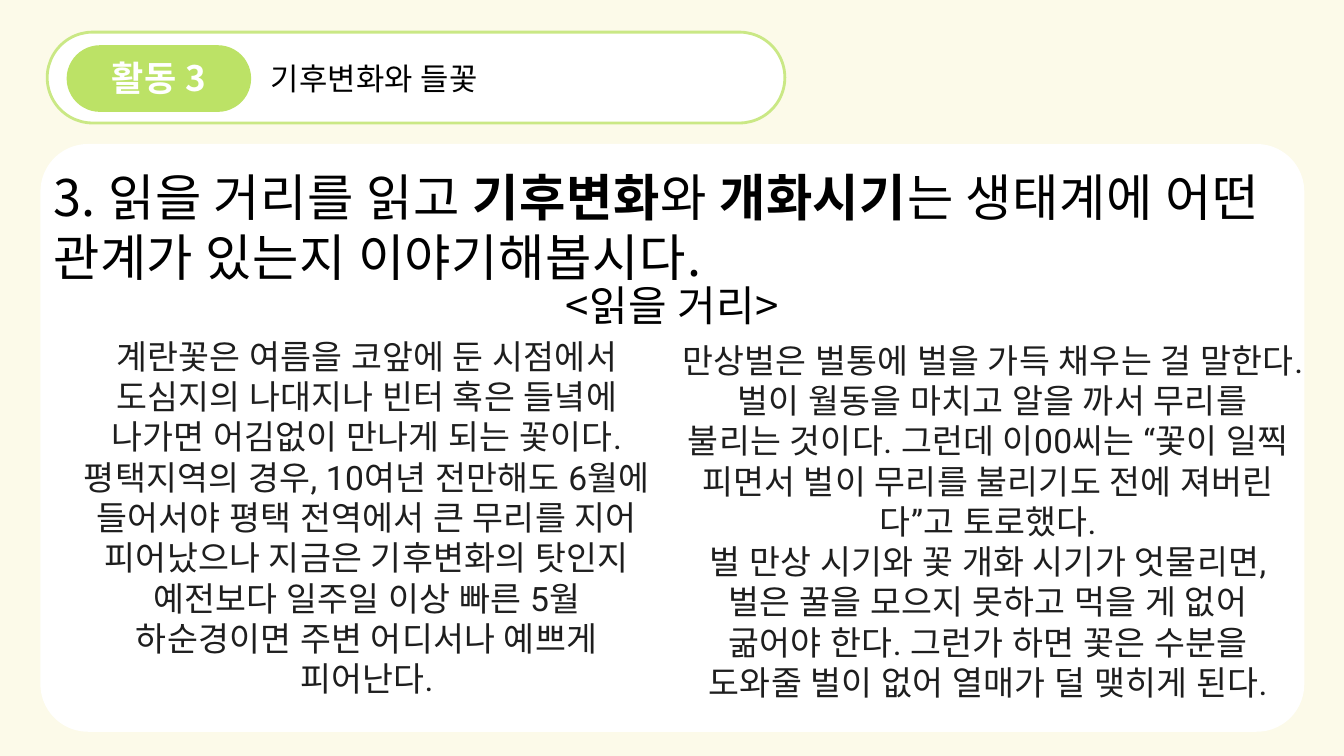
from pptx import Presentation
from pptx.dml.color import RGBColor
from pptx.enum.shapes import MSO_SHAPE as Shape
from pptx.enum.text import MSO_ANCHOR as Anchor, PP_ALIGN as Align
from pptx.oxml.ns import qn
from pptx.util import Cm, Pt
from lxml.etree import SubElement

COLORS = {
    "cream": "FCFAE9", "white": "FFFFFF", "border": "CAE885",
    "green": "BCE266", "black": "000000", "ink": "1E1E1E",
}
KOREAN = "Noto Sans CJK KR"
LATIN = "Roboto"
TRACKING = {KOREAN: 1.2, LATIN: 0.7}


def add_panel(place, corner, fill, border=None):
    panel = page.shapes.add_shape(Shape.ROUNDED_RECTANGLE, *map(Cm, place))
    panel.adjustments[0] = corner
    panel.shadow.inherit = False
    panel.fill.solid()
    panel.fill.fore_color.rgb = RGBColor.from_string(COLORS[fill])
    if border:
        panel.line.color.rgb = RGBColor.from_string(COLORS[border])
        panel.line.width = Pt(2)
    else:
        panel.line.fill.background()
    return panel


def write(shape, paragraphs, size, color, align=Align.CENTER, font=KOREAN, bold=False):
    frame = shape.text_frame
    frame.word_wrap = True
    for index, spans in enumerate(paragraphs):
        para = frame.paragraphs[0] if index == 0 else frame.add_paragraph()
        para.alignment = align
        para.line_spacing = Pt(size * 1.2)
        for position, text in enumerate(spans):
            span = para.add_run()
            span.text = text
            look = {"size": Pt(size), "name": font, "bold": bold or position % 2 == 1}
            for name, value in look.items():
                setattr(span.font, name, value)
            span.font.color.rgb = RGBColor.from_string(COLORS[color])
            properties = span.font._element
            properties.set("spc", str(round(size * TRACKING[font])))
            SubElement(properties, qn("a:ea"), typeface=font)


deck = Presentation()
deck.slide_width, deck.slide_height = Cm(33.87), Cm(19.05)
page = deck.slides.add_slide(deck.slide_layouts[6])
page.background.fill.solid()
page.background.fill.fore_color.rgb = RGBColor.from_string(COLORS["cream"])

add_panel((1.19, 0.81, 18.59, 2.29), 0.5, "white", "border")
badge = add_panel((1.68, 1.14, 4.65, 1.68), 0.5, "green")
badge.text_frame.vertical_anchor = Anchor.MIDDLE
badge.text_frame.margin_bottom = Cm(0.2)
write(badge, [["활동 3"]], 25, "white", bold=True)
add_panel((1.02, 3.63, 31.85, 14.81), 0.081, "white")

question = [
    "3. 읽을 거리를 읽고 ", "기후변화", "와 ", "개화시기",
    "는 생태계에 어떤 관계가 있는지 이야기해봅시다.",
]
flower = (
    "계란꽃은 여름을 코앞에 둔 시점에서 도심지의 나대지나 빈터 혹은 들녘에 나가면 "
    "어김없이 만나게 되는 꽃이다. 평택지역의 경우, 10여년 전만해도 6월에 들어서야 "
    "평택 전역에서 큰 무리를 지어 피어났으나 지금은 기후변화의 탓인지 예전보다 "
    "일주일 이상 빠른 5월 하순경이면 주변 어디서나 예쁘게 피어난다."
)
swarm = (
    "만상벌은 벌통에 벌을 가득 채우는 걸 말한다. 벌이 월동을 마치고 알을 까서 "
    "무리를 불리는 것이다. 그런데 이00씨는 “꽃이 일찍 피면서 벌이 무리를 불리기도 "
    "전에 져버린다”고 토로했다."
)
mismatch = (
    "벌 만상 시기와 꽃 개화 시기가 엇물리면, 벌은 꿀을 모으지 못하고 먹을 게 없어 "
    "굶어야 한다. 그런가 하면 꽃은 수분을 도와줄 벌이 없어 열매가 덜 맺히게 된다."
)

text_boxes = [
    ((6.57, 1.37, 12.7, 1.17), [["기후변화와 들꽃"]], 22, "black", Align.LEFT, KOREAN),
    ((1.55, 6.93, 30.78, 1.78), [["<읽을 거리>"]], 30, "black", Align.CENTER, KOREAN),
    ((1.55, 8.33, 15.39, 7.24), [[flower]], 24, "ink", Align.CENTER, LATIN),
    ((1.09, 4.06, 31.65, 3.3), [question], 36, "black", Align.LEFT, KOREAN),
    ((16.94, 8.43, 15.93, 7.24), [[swarm], [mismatch]], 24, "ink", Align.CENTER, LATIN),
]
for place, *content in text_boxes:
    write(page.shapes.add_textbox(*map(Cm, place)), *content)

deck.save("out.pptx")
